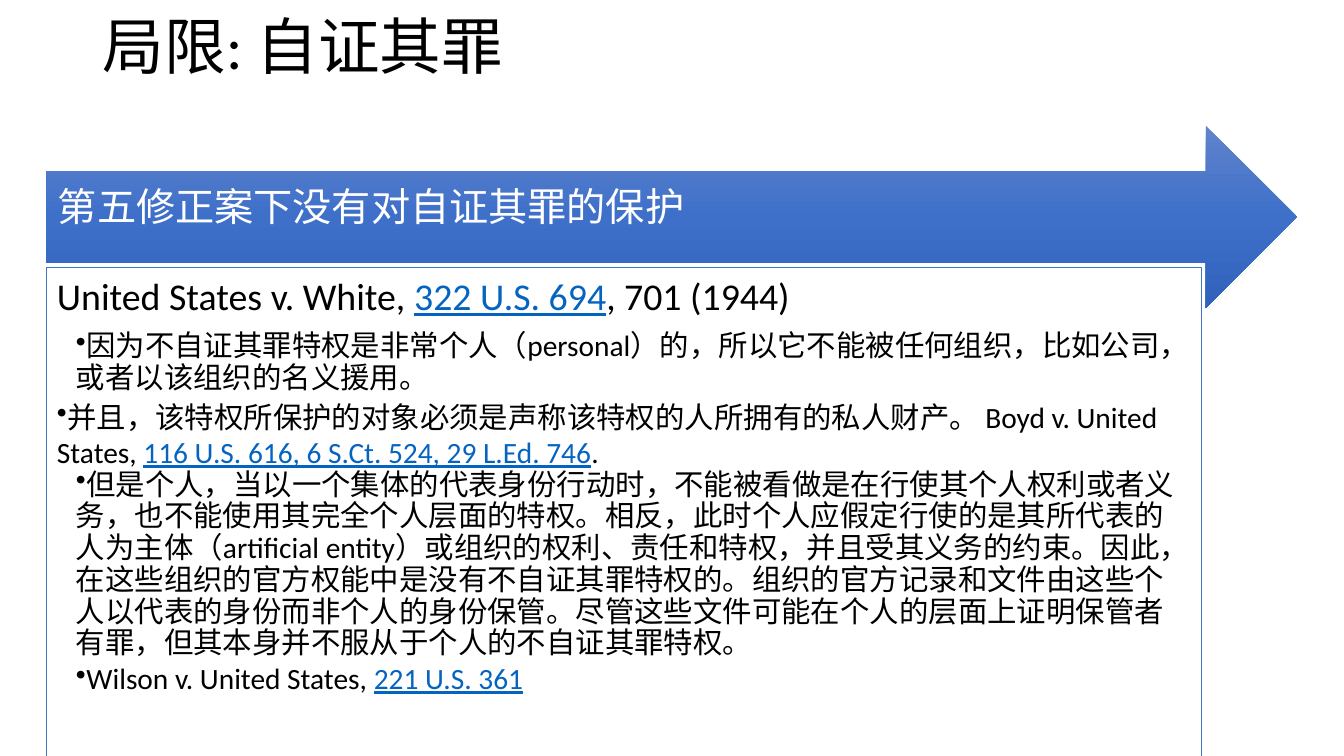
from lxml import etree
from pptx import Presentation
from pptx.dml.color import RGBColor
from pptx.enum.shapes import MSO_SHAPE
from pptx.enum.text import MSO_ANCHOR, MSO_AUTO_SIZE, PP_ALIGN
from pptx.oxml.ns import qn
from pptx.util import Pt

ARROW, RECT = MSO_SHAPE.RIGHT_ARROW, MSO_SHAPE.RECTANGLE
TOP, MIDDLE = MSO_ANCHOR.TOP, MSO_ANCHOR.MIDDLE
LEFT, NO_FIT = PP_ALIGN.LEFT, MSO_AUTO_SIZE.NONE
EMU_PER_PX = 12192000 / 1344
COLORS = {"text": "000000", "white": "FFFFFF", "cite": "0563C1", "border": "4472C4"}
BANNER_STOPS = ((0, "6183CB"), (50, "3E70CA"), (100, "3062BB"))
TITLE = "局限: 自证其罪"
BANNER = "第五修正案下没有对自证其罪的保护"
HEADING = (("United States v. White, ", "text"), ("322 U.S. 694", "cite"),
           (", 701 (1944)", "text"))
POINTS = (
    (19, 0.9, 3, (
        ("因为不自证其罪特权是非常个人（personal）的，所以它不能被任何组织，比如公司，"
         "或者以该组织的名义援用。", "text"),)),
    (0, 1.0, 0, (
        ("并且，该特权所保护的对象必须是声称该特权的人所拥有的私人财产。 "
         "Boyd v. United States, ", "text"),
        ("116 U.S. 616, 6 S.Ct. 524, 29 L.Ed. 746", "cite"),
        (".", "text"))),
    (19, 0.9, 3, (
        ("但是个人，当以一个集体的代表身份行动时，不能被看做是在行使其个人权利或者义务，"
         "也不能使用其完全个人层面的特权。相反，此时个人应假定行使的是其所代表的人为主体"
         "（artificial entity）或组织的权利、责任和特权，并且受其义务的约束。因此，"
         "在这些组织的官方权能中是没有不自证其罪特权的。组织的官方记录和文件由这些个人"
         "以代表的身份而非个人的身份保管。尽管这些文件可能在个人的层面上证明保管者有罪，"
         "但其本身并不服从于个人的不自证其罪特权。", "text"),)),
    (19, 0.9, 3, (("Wilson v. United States, ", "text"), ("221 U.S. 361", "cite"))),
)


def px(n):
    return round(n * EMU_PER_PX)


class SlideBuilder:
    """Holds the style and the current slide, and adds its elements."""

    def __init__(self, prs, font="Calibri"):
        self.font = font
        self.s = prs.slides.add_slide(prs.slide_layouts[5])

    def paragraph(self, p, runs, size, spacing=0.9, after=0, indent=None):
        p.alignment = LEFT
        p.line_spacing = spacing
        p.space_before, p.space_after = Pt(0), Pt(after)
        if indent is not None:
            p.level = 1
            pPr = p._p.get_or_add_pPr()
            pPr.set("marL", str(px(indent)))
            pPr.set("indent", "0")
            etree.SubElement(pPr, qn("a:buChar")).set("char", "•")
        for text, color in runs:
            r = p.add_run()
            r.text = text
            r.font.name, r.font.size = self.font, Pt(size)
            r.font.color.rgb = RGBColor.from_string(COLORS[color])
            if color == "cite":
                r.font.underline = True

    def frame(self, tf, anchor, insets):
        tf.word_wrap, tf.auto_size, tf.vertical_anchor = True, NO_FIT, anchor
        tf.margin_left, tf.margin_top, tf.margin_right, tf.margin_bottom = map(px, insets)
        return tf

    def title(self, text, box):
        sp = self.s.shapes.title
        sp.left, sp.top, sp.width, sp.height = map(px, box)
        tf = self.frame(sp.text_frame, MIDDLE, (10, 5, 10, 5))
        self.paragraph(tf.paragraphs[0], ((text, "text"),), 44)

    def shape(self, kind, box, anchor, insets):
        sp = self.s.shapes.add_shape(kind, *map(px, box))
        sp.shadow.inherit = False
        self.frame(sp.text_frame, anchor, insets)
        return sp

    def banner(self, text, box):
        sp = self.shape(ARROW, box, MIDDLE, (12, 12, 28, 29))
        sp.line.fill.background()
        sp.fill.gradient()
        sp.fill.gradient_angle = 270
        stops = sp._element.spPr.find(qn("a:gradFill")).find(qn("a:gsLst"))
        for old in list(stops):
            stops.remove(old)
        for position, color in BANNER_STOPS:
            gs = etree.SubElement(stops, qn("a:gs"))
            gs.set("pos", str(position * 1000))
            etree.SubElement(gs, qn("a:srgbClr")).set("val", color)
        self.paragraph(sp.text_frame.paragraphs[0], ((text, "white"),), 28)

    def panel(self, heading, points, box):
        sp = self.shape(RECT, box, TOP, (11, 11, 11, 11))
        sp.fill.solid()
        sp.fill.fore_color.rgb = RGBColor.from_string(COLORS["white"])
        sp.line.color.rgb = RGBColor.from_string(COLORS["border"])
        sp.line.width = Pt(0.5)
        tf = sp.text_frame
        self.paragraph(tf.paragraphs[0], heading, 27, after=9)
        for indent, spacing, after, runs in points:
            self.paragraph(tf.add_paragraph(), runs, 21, spacing, after, indent)


def main():
    prs = Presentation()
    prs.slide_width, prs.slide_height = px(1344), px(756)
    slide = SlideBuilder(prs)
    slide.title(TITLE, (93, 0, 1159, 99))
    slide.banner(BANNER, (46, 126, 1251, 182))
    slide.panel(HEADING, POINTS, (46, 267, 1155, 489))
    prs.save("out.pptx")


if __name__ == "__main__":
    main()
